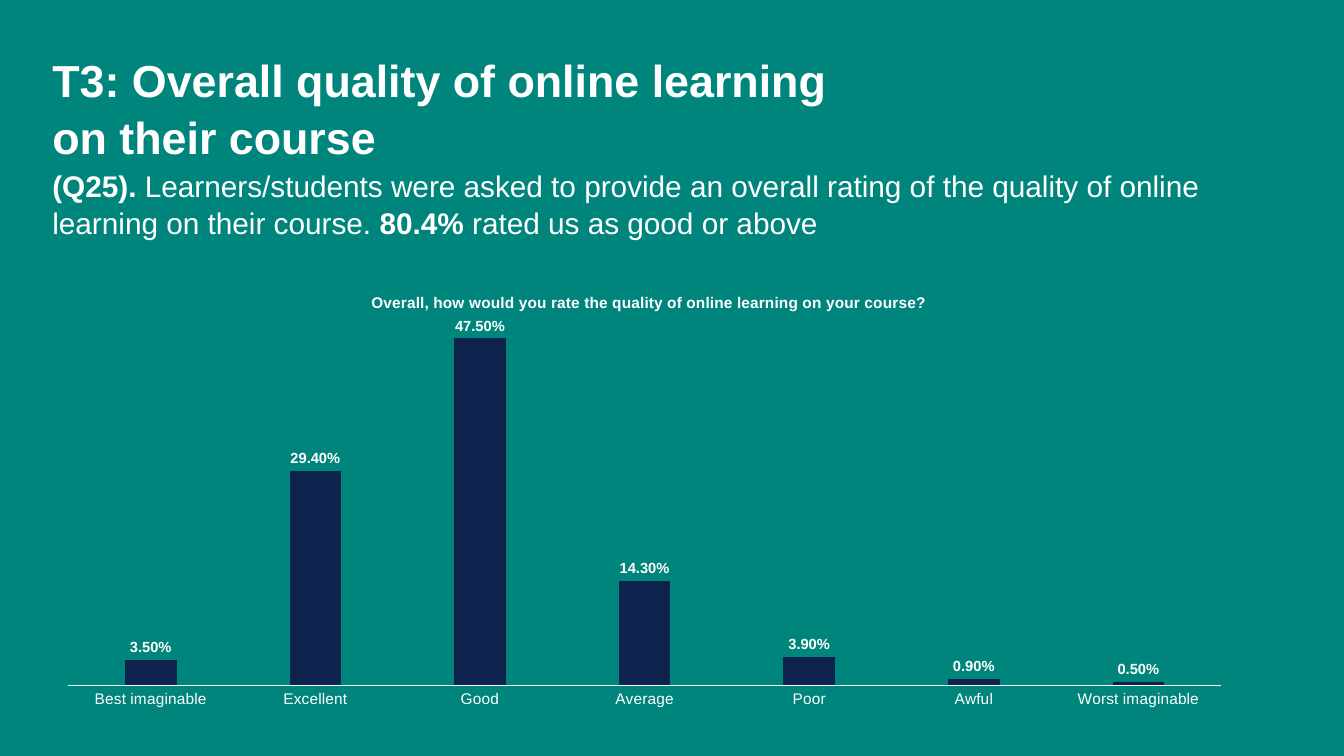
from dataclasses import dataclass

from lxml import etree
from pptx import Presentation
from pptx import util as u
from pptx.chart.data import CategoryChartData
from pptx.dml.color import RGBColor
from pptx.enum import chart as charts, text
from pptx.oxml.ns import qn

TEAL, NAVY, WHITE = "00857D", "0D224C", "FFFFFF"
FONT = "Arial"
PERCENT = "0.00%"


@dataclass
class Span:
    wording: str
    bold: bool = False


@dataclass
class Area:
    left: float
    top: float
    width: float
    height: float

    def lengths(self):
        return [u.Cm(side) for side in (self.left, self.top, self.width, self.height)]


RATINGS = {
    "Best imaginable": 0.035,
    "Excellent": 0.294,
    "Good": 0.475,
    "Average": 0.143,
    "Poor": 0.039,
    "Awful": 0.009,
    "Worst imaginable": 0.005,
}
HEADING = [Span("T3: Overall quality of online learning on their course", True)]
SUMMARY = [
    Span("(Q25). ", True),
    Span("Learners/students were asked to provide an overall rating of the quality "
         "of online learning on their course. "),
    Span("80.4% ", True),
    Span("rated us as good or above"),
]
CHART_TITLE = [
    Span("Overall, how would you rate the quality of online learning on your course?", True)
]


def paint(fill, colour: str) -> None:
    fill.solid()
    fill.fore_color.rgb = RGBColor.from_string(colour)


def style(font, size: float, bold: bool = False) -> None:
    font.name = FONT
    font.size = u.Pt(size)
    font.bold = bold
    font.color.rgb = RGBColor.from_string(WHITE)


def write(para, spans: list[Span], size: float) -> None:
    for span in spans:
        run = para.add_run()
        run.text = span.wording
        style(run.font, size, span.bold)


def fill_box(box, area: Area, spans: list[Span], size: float) -> None:
    box.left, box.top, box.width, box.height = area.lengths()
    frame = box.text_frame
    frame.margin_left = frame.margin_top = frame.margin_right = frame.margin_bottom = 0
    frame.word_wrap = True
    frame.auto_size = text.MSO_AUTO_SIZE.NONE
    frame.vertical_anchor = text.MSO_ANCHOR.TOP
    para = frame.paragraphs[0]
    para.alignment = text.PP_ALIGN.LEFT
    para.line_spacing = 1.05
    write(para, spans, size)


def place(element, index: int, **settings) -> None:
    for old in element.findall(qn("c:layout")):
        element.remove(old)
    layout = etree.Element(qn("c:layout"))
    manual = etree.SubElement(layout, qn("c:manualLayout"))
    for name, value in settings.items():
        etree.SubElement(manual, qn(f"c:{name}")).set("val", str(value))
    element.insert(index, layout)


def add_ratings(page, area: Area) -> None:
    data = CategoryChartData(number_format=PERCENT)
    data.categories = list(RATINGS)
    data.add_series("Series 1", list(RATINGS.values()))
    kind = charts.XL_CHART_TYPE.COLUMN_CLUSTERED
    chart = page.shapes.add_chart(kind, *area.lengths(), data).chart
    style(chart.font, 10)
    chart.has_legend = False
    chart.has_title = True
    title = chart.chart_title
    write(title.text_frame.paragraphs[0], CHART_TITLE, 11)
    title.include_in_layout = False

    plot = chart.plots[0]
    plot.gap_width = 219
    plot.overlap = -27
    plot.vary_by_categories = False
    paint(plot.series[0].format.fill, NAVY)
    plot.has_data_labels = True
    labels = plot.data_labels
    labels.show_value = True
    labels.number_format = PERCENT
    labels.number_format_is_linked = False
    labels.position = charts.XL_LABEL_POSITION.OUTSIDE_END
    style(labels.font, 10.5, True)

    names = chart.category_axis
    names.major_tick_mark = charts.XL_TICK_MARK.NONE
    names.has_major_gridlines = False
    style(names.tick_labels.font, 11)
    paint(names.format.line.fill, WHITE)
    names.format.line.width = u.Pt(0.75)
    shares = chart.value_axis
    shares.minimum_scale = 0
    shares.maximum_scale = 0.5
    shares.has_major_gridlines = False
    shares.tick_labels.number_format = PERCENT
    shares.tick_labels.number_format_is_linked = False
    shares.visible = False

    place(title._element, 1, xMode="edge", yMode="edge", x=0.27, y=0.04)
    place(chart._chartSpace.chart.plotArea, 0, layoutTarget="inner",
          xMode="edge", yMode="edge", x=0.02, y=0.11, w=0.96, h=0.82)


def main() -> None:
    deck = Presentation()
    deck.slide_width, deck.slide_height = u.Cm(33.87), u.Cm(19.05)
    page = deck.slides.add_slide(deck.slide_layouts.get_by_name("Title Only"))
    paint(page.background.fill, TEAL)
    fill_box(page.shapes.title, Area(1.32, 1.27, 20.57, 1.27), HEADING, 32)
    summary_area = Area(1.32, 4.17, 31.01, 3.68)
    summary = page.shapes.add_textbox(*summary_area.lengths())
    fill_box(summary, summary_area, SUMMARY, 21.3)
    add_ratings(page, Area(1.12, 6.83, 30.25, 11.23))
    deck.save("out.pptx")


if __name__ == "__main__":
    main()
